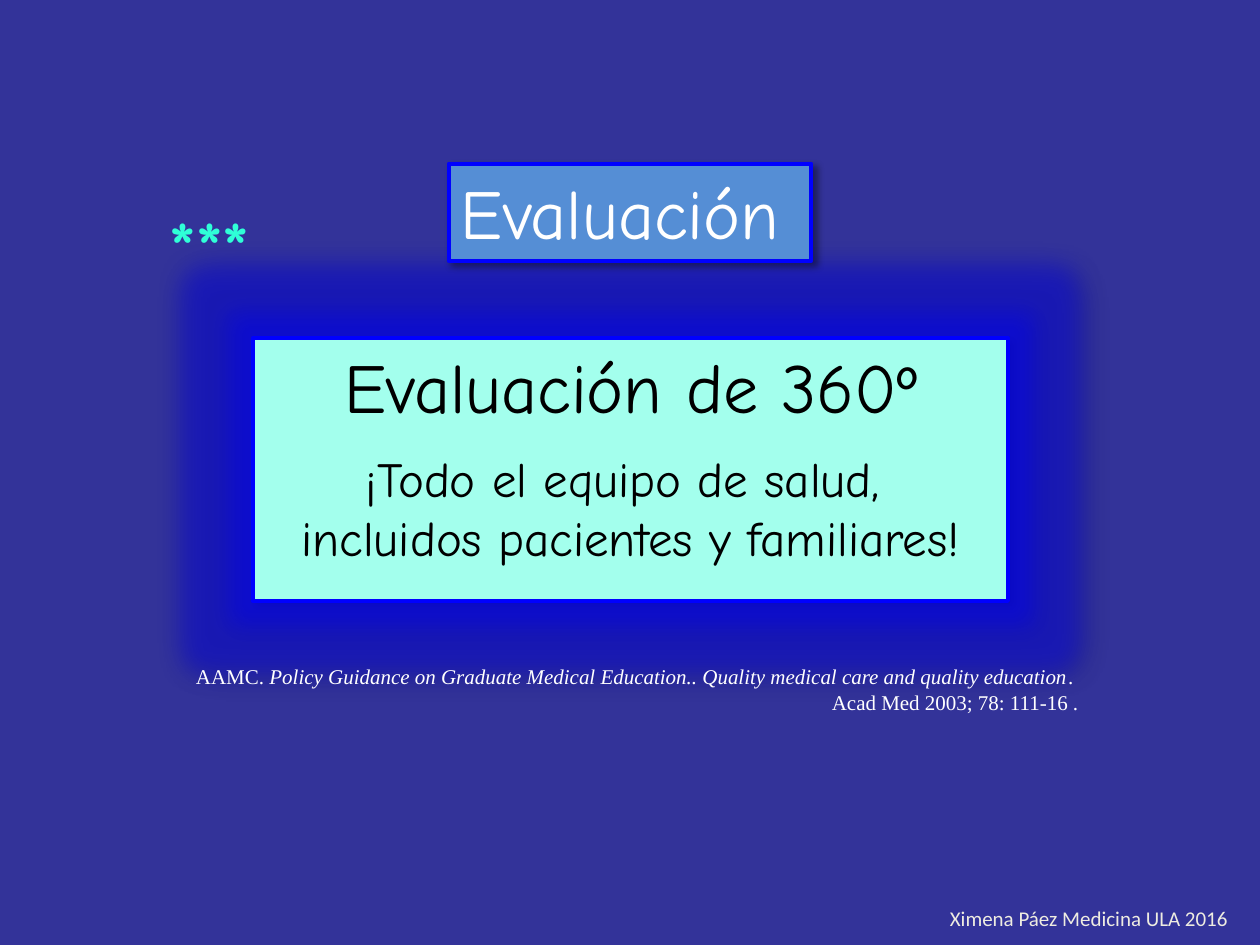
from lxml import etree
from pptx import Presentation
from pptx.dml.color import RGBColor
from pptx.enum.shapes import MSO_SHAPE
from pptx.enum.text import MSO_ANCHOR, PP_ALIGN
from pptx.oxml import parse_xml
from pptx.util import Inches, Pt

NAVY = RGBColor(0x33, 0x33, 0x99)
BLUE = RGBColor(0x00, 0x00, 0xFF)
SKY = RGBColor(0x55, 0x8E, 0xD5)
MINT = RGBColor(0xA3, 0xFF, 0xED)
AQUA = RGBColor(0x2F, 0xFF, 0xD7)
CREAM = RGBColor(0xEE, 0xEC, 0xE1)
WHITE = RGBColor(0xFF, 0xFF, 0xFF)
BLACK = RGBColor(0x00, 0x00, 0x00)
COMIC = "Comic Neue"
TIMES = "Times New Roman"

NS = "http://schemas.openxmlformats.org/drawingml/2006/main"
GLOW = '<a:glow rad="%d"><a:srgbClr val="0000FF"><a:alpha val="40000"/></a:srgbClr></a:glow>'
SHADE = ('<a:outerShdw blurRad="%d" dist="%d" dir="2700000" algn="tl" rotWithShape="0">'
         '<a:srgbClr val="000000"><a:alpha val="40000"/></a:srgbClr></a:outerShdw>')

prs = Presentation()
prs.slide_width, prs.slide_height = Inches(10), Inches(7.5)
slide = prs.slides.add_slide(prs.slide_layouts[6])
slide.background.fill.solid()
slide.background.fill.fore_color.rgb = NAVY


def write(shape, lines, font, color, align=PP_ALIGN.LEFT, wrap=True):
    """Fill a shape with lines of (size, runs); a run is (text, italic)."""
    frame = shape.text_frame
    frame.word_wrap = wrap
    frame.vertical_anchor = MSO_ANCHOR.TOP
    for i, (size, runs) in enumerate(lines):
        par = frame.paragraphs[0] if i == 0 else frame.add_paragraph()
        par.alignment = align
        par.font.name, par.font.size = font, Pt(size)
        par.font.color.rgb = color
        for text, slant in runs:
            run = par.add_run()
            run.text = text
            if slant:
                run.font.italic = True
    return frame.paragraphs


def panel(box, fill, glow=0):
    """Add a blue-edged rectangle with a soft shadow and an optional glow."""
    shape = slide.shapes.add_shape(MSO_SHAPE.RECTANGLE, *map(Inches, box))
    shape.fill.solid()
    shape.fill.fore_color.rgb = fill
    shape.line.color.rgb = BLUE
    shape.line.width = Pt(2.25)
    shape.shadow.inherit = False
    effects = shape.element.spPr.find(f"{{{NS}}}effectLst")
    parts = [GLOW % Pt(glow)] if glow else []
    parts.append(SHADE % (Pt(4), Pt(3)))
    for part in parts:
        effects.append(parse_xml(part.replace(" ", f' xmlns:a="{NS}" ', 1)))
    return shape


# Main message
main = panel((2.01, 2.68, 5.99, 2.09), MINT, glow=28)
pars = write(main, [
    (40, [("Evaluación de 360º", False)]),
    (28, [("¡Todo el equipo de salud, ", False)]),
    (28, [("incluidos pacientes y familiares!", False)]),
], COMIC, BLACK, PP_ALIGN.CENTER, wrap=False)
pars[1].space_before = Pt(12)

# Reference
cite = slide.shapes.add_textbox(Inches(1.26), Inches(5.22), Inches(7.4), Inches(0.5))
write(cite, [
    (12, [("AAMC. ", False),
          ("Policy Guidance on Graduate Medical Education.. "
           "Quality medical care and quality education", True),
          (". ", False)]),
    (12, [("Acad Med 2003; 78: 111-16 .", False)]),
], TIMES, WHITE, PP_ALIGN.RIGHT)

# Author
name = slide.shapes.add_textbox(Inches(7.44), Inches(7.14), Inches(2.52), Inches(0.3))
write(name, [(12, [("Ximena Páez Medicina ULA 2016", False)])], "Calibri", CREAM, wrap=False)

# Stars
stars = slide.shapes.add_textbox(Inches(1.25), Inches(1.55), Inches(1.1), Inches(0.77))
pars = write(stars, [(40, [("***", False)])], COMIC, AQUA)
pars[0].font.bold = True

# Title
title = panel((3.56, 1.3, 2.88, 0.77), SKY)
write(title, [(40, [("Evaluación", False)])], COMIC, WHITE, wrap=False)

prs.save("out.pptx")
